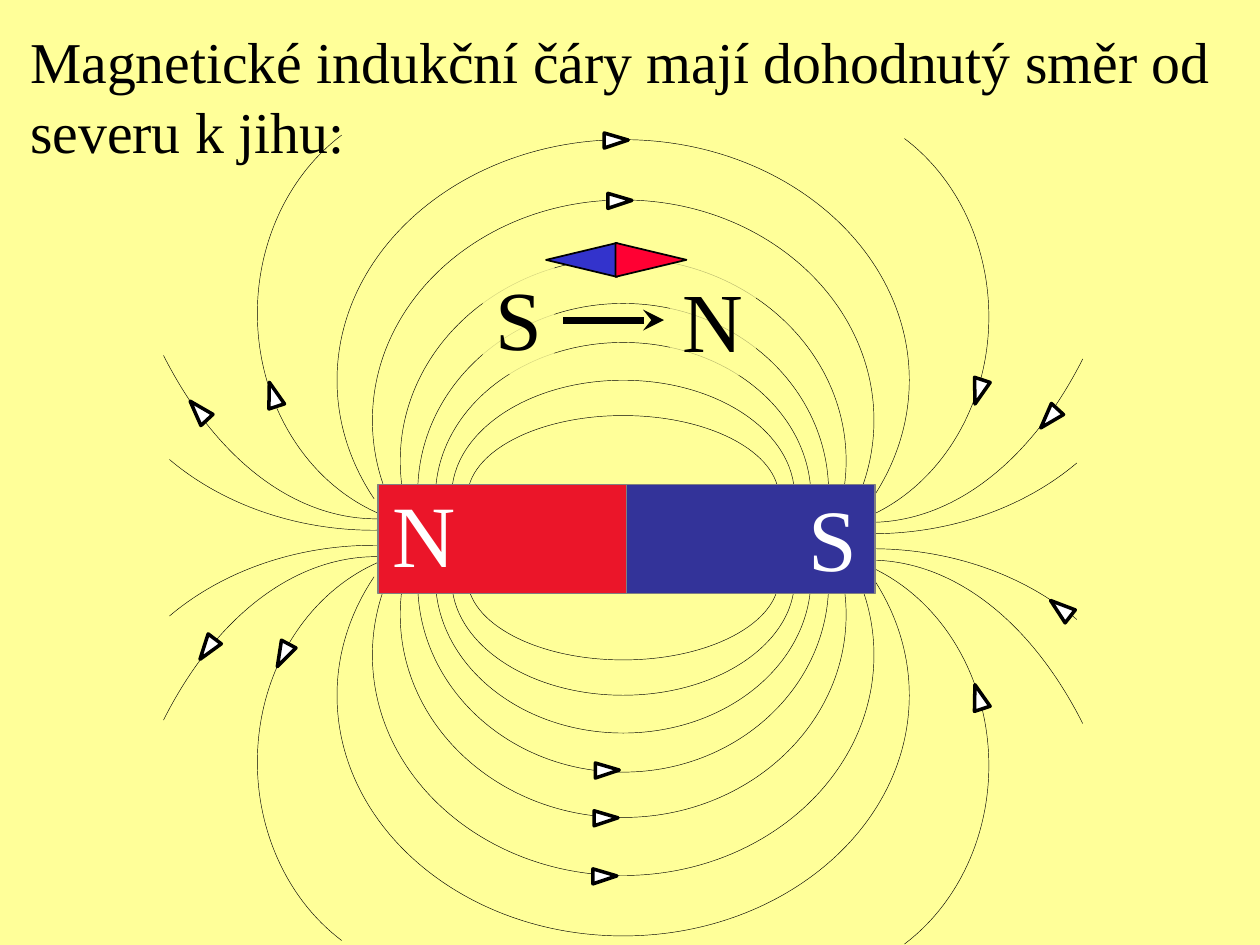
import math
from dataclasses import dataclass

from lxml import etree
from pptx import Presentation
from pptx.dml.color import RGBColor
from pptx.enum.shapes import MSO_CONNECTOR, MSO_SHAPE
from pptx.enum.text import MSO_ANCHOR, PP_ALIGN
from pptx.oxml.ns import qn
from pptx.util import Pt

RECTANGLE = MSO_SHAPE.RECTANGLE
TRIANGLE = MSO_SHAPE.ISOSCELES_TRIANGLE
STRAIGHT = MSO_CONNECTOR.STRAIGHT
LEFT = PP_ALIGN.LEFT
TOP = MSO_ANCHOR.TOP
TITLE_ONLY = 5


@dataclass(frozen=True)
class Theme:
    font: str = "Times New Roman"
    title_size: float = 33
    compass_size: float = 48
    pole_size: float = 50
    background: str = "FFFF99"
    ink: str = "000000"
    white: str = "FFFFFF"
    magnet_edge: str = "808080"
    magnet_north: str = "EB1529"
    magnet_south: str = "333399"
    needle_north: str = "FF0033"
    needle_south: str = "3333CC"


THEME = Theme()

# The field is symmetric about this point.
AXIS_X, AXIS_Y = 356.1, 307.3
UNITS_PER_POINT = 100
LOOP_END = 22.3  # distance from the axis at which the loops meet the magnet

# Horizontal radius, centre distance below the axis, vertical radius
LOOPS = [
    (89, 23, 46.8), (98, 23.8, 66.2), (107.3, 23, 88.6), (117.4, 25.9, 108),
    (127.4, 43.9, 115.9), (143.3, 67, 126), (163.5, 90, 137.5),
]
# Centre x and y from the field centre, both radii, start and end angle
SIDE_ARCS = [
    (-101, 128.2, 108, 122.4, 123.6, 250.5),
    (-142.5, 136.1, 162, 131.8, 223.9, 271),
    (-141, 266.4, 157.4, 255.6, 219.4, 271),
]
# Centre x, centre y, rotation
LOOP_ARROWS = [
    (354.2, 114.8, 90), (352.1, 80.3, 90), (347, 440.3, 90),
    (346.3, 467.6, 90), (345.6, 500.8, 90),
]
SIDE_ARROWS = [
    (161.6, 374.4, 208), (118.4, 370.8, 217), (113.4, 234.7, 317.2),
    (155.9, 225.4, 342), (599.4, 239, 222.6), (605.9, 347.8, 308),
    (559.1, 223.9, 198), (559.1, 398.2, 342),
]


def color(value):
    return RGBColor.from_string(value)


def paint(shape, fill, line=None, width=0):
    shape.shadow.inherit = False
    shape.fill.solid()
    shape.fill.fore_color.rgb = color(fill)
    if line:
        shape.line.color.rgb = color(line)
        shape.line.width = Pt(width)


def write(shape, text, size, text_color, wrap):
    frame = shape.text_frame
    frame_format = {
        "word_wrap": wrap, "vertical_anchor": TOP,
        "margin_left": Pt(7.2), "margin_right": Pt(7.2),
        "margin_top": Pt(3.6), "margin_bottom": Pt(3.6),
    }
    for name, value in frame_format.items():
        setattr(frame, name, value)
    paragraph = frame.paragraphs[0]
    paragraph.alignment = LEFT
    run = paragraph.add_run()
    run.text = text
    for name, value in {"name": THEME.font, "size": Pt(size), "bold": False}.items():
        setattr(run.font, name, value)
    run.font.color.rgb = color(text_color)
    return paragraph


def add_title(slide, text):
    title = slide.shapes.title
    box = {"left": 10, "top": 10.8, "width": 695.5, "height": 86.4}
    for name, value in box.items():
        setattr(title, name, Pt(value))
    paragraph = write(title, text, THEME.title_size, THEME.ink, True)
    paragraph.line_spacing = Pt(40)


def add_arc(slide, center, radii, start, end, mirror_x, mirror_y, drop=0):
    """Draw an elliptical field line as Bézier curves; angles run clockwise from the right."""
    def place(angle, tangent=0):
        cosine, sine = math.cos(angle), math.sin(angle)
        x = center[0] + radii[0] * (cosine - tangent * sine)
        y = center[1] + radii[1] * (sine + tangent * cosine)
        return (round((AXIS_X + mirror_x * x) * UNITS_PER_POINT),
                round((AXIS_Y + mirror_y * y + drop) * UNITS_PER_POINT))

    quadrants = [angle for angle in range(0, 360, 90) if start < angle < end]
    angles = [math.radians(angle) for angle in (start, *quadrants, end)]
    anchors = [place(angle) for angle in angles]
    builder = slide.shapes.build_freeform(*anchors[0], scale=Pt(1) / UNITS_PER_POINT)
    builder.add_line_segments(anchors[1:], close=False)
    arc = builder.convert_to_shape()

    left, top = map(min, zip(*anchors))
    segments = list(arc._element.spPr.iter(qn("a:lnTo")))
    for segment, first, last in zip(segments, angles, angles[1:]):
        tangent = 4 / 3 * math.tan((last - first) / 4)
        curve = etree.Element(qn("a:cubicBezTo"))
        for x, y in (place(first, tangent), place(last, -tangent), place(last)):
            point = etree.SubElement(curve, qn("a:pt"))
            point.set("x", str(x - left))
            point.set("y", str(y - top))
        segment.getparent().replace(segment, curve)

    arc.shadow.inherit = False
    arc.fill.background()
    arc.line.color.rgb = color(THEME.ink)
    arc.line.width = Pt(0.25)


def add_field(slide):
    for mirror_y in (1, -1):
        for radius_x, center_y, radius_y in LOOPS:
            rise = math.degrees(math.asin((center_y - LOOP_END) / radius_y))
            add_arc(slide, (0, center_y), (radius_x, radius_y),
                    -rise, 180 + rise, 1, mirror_y)
        for mirror_x, drop in ((1, 0), (-1, 2)):
            for x, y, radius_x, radius_y, start, end in SIDE_ARCS:
                add_arc(slide, (x, y), (radius_x, radius_y),
                        start, end, mirror_x, mirror_y, drop)


def add_rectangle(slide, left, top, width, height, fill):
    shape = slide.shapes.add_shape(RECTANGLE, Pt(left), Pt(top), Pt(width), Pt(height))
    paint(shape, fill, THEME.magnet_edge, 0.75)


def add_triangle(slide, x, y, width, height, rotation, fill, line_width, tip=0.5):
    """Add a triangle centred at x, y; at rotation 0 it points up."""
    shape = slide.shapes.add_shape(TRIANGLE, Pt(x - width / 2), Pt(y - height / 2),
                                   Pt(width), Pt(height))
    shape.adjustments[0] = tip
    shape.rotation = rotation
    paint(shape, fill, THEME.ink, line_width)


def add_letter(slide, text, left, top, width, height, size, text_color, opacity=None):
    box = slide.shapes.add_textbox(Pt(left), Pt(top), Pt(width), Pt(height))
    if opacity:
        box.fill.solid()
        box.fill.fore_color.rgb = color(THEME.background)
        fill_color = box._element.spPr.find(qn("a:solidFill"))[0]
        etree.SubElement(fill_color, qn("a:alpha")).set("val", str(opacity * 1000))
    write(box, text, size, text_color, False)


def add_arrow(slide, start, end):
    arrow = slide.shapes.add_connector(STRAIGHT, *map(Pt, start + end))
    arrow.line.color.rgb = color(THEME.ink)
    arrow.line.width = Pt(4)
    properties = arrow._element.spPr
    etree.SubElement(properties.find(qn("a:ln")), qn("a:tailEnd")).set("type", "stealth")
    etree.SubElement(properties, qn("a:effectLst"))


def main():
    presentation = Presentation()
    presentation.slide_width, presentation.slide_height = Pt(720), Pt(540)
    slide = presentation.slides.add_slide(presentation.slide_layouts[TITLE_ONLY])
    slide.background.fill.solid()
    slide.background.fill.fore_color.rgb = color(THEME.background)

    add_title(slide, "Magnetické indukční čáry mají dohodnutý směr od severu k jihu:")
    add_field(slide)
    add_rectangle(slide, 216, 277, 142, 62, THEME.magnet_north)
    add_rectangle(slide, 358, 277, 142, 62, THEME.magnet_south)

    add_letter(slide, "N", 383, 149.8, 49, 64.8, THEME.compass_size, THEME.ink, 73)
    add_letter(slide, "S", 275.8, 149, 41, 64.8, THEME.compass_size, THEME.ink, 83)
    add_arrow(slide, (321.8, 182.9), (379.4, 182.9))

    for x, y, rotation in LOOP_ARROWS:
        add_triangle(slide, x, y, 8.6, 13.7, rotation, THEME.white, 2, 0.47)
    for x, y, rotation in SIDE_ARROWS:
        tip = 0.53 if rotation > 270 else 0.47
        add_triangle(slide, x, y, 9.4, 14.4, rotation, THEME.white, 2, tip)

    add_letter(slide, "N", 217.4, 270.7, 50.4, 67, THEME.pole_size, THEME.white)
    add_letter(slide, "S", 455, 272.9, 42.5, 67, THEME.pole_size, THEME.white)
    add_triangle(slide, 332.3, 148.5, 19.4, 40.5, 270, THEME.needle_south, 1)
    add_triangle(slide, 372, 148.5, 19.4, 40.5, 90, THEME.needle_north, 1)

    presentation.save("out.pptx")


if __name__ == "__main__":
    main()
